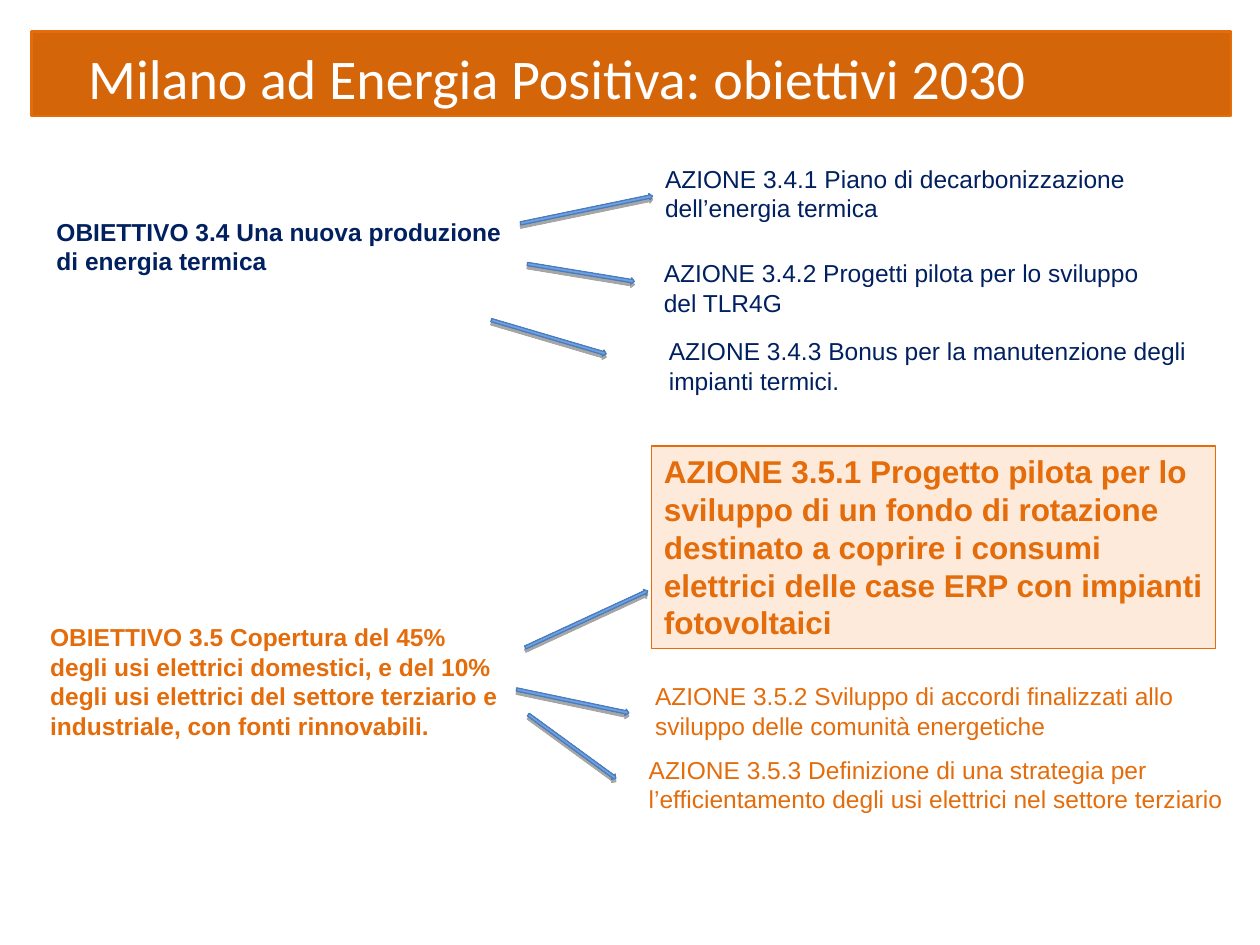
from lxml.etree import SubElement
from pptx import Presentation
from pptx.dml.color import RGBColor
from pptx.enum.shapes import MSO_SHAPE as SHAPE
from pptx.enum.text import MSO_ANCHOR as ANCHOR, PP_ALIGN as ALIGN
from pptx.oxml.ns import qn
from pptx.util import Inches, Pt

# Content
NAVY, ORANGE = "002060", "E46C0A"
TITLE = "Milano ad Energia Positiva: obiettivi 2030"
# (left, top, width, height), colour, bold, text
TEXTS = [
    ((0.35, 1.67, 3.83, 0.56), NAVY, True,
     "OBIETTIVO 3.4 Una nuova produzione di energia termica"),
    ((5.18, 1.25, 4.33, 0.57), NAVY, False,
     "AZIONE 3.4.1 Piano di decarbonizzazione dell’energia termica"),
    ((5.17, 2, 4.24, 0.57), NAVY, False,
     "AZIONE 3.4.2 Progetti pilota per lo sviluppo del TLR4G"),
    ((5.21, 2.62, 4.31, 0.57), NAVY, False,
     "AZIONE 3.4.3 Bonus per la manutenzione degli impianti termici."),
    ((0.3, 4.89, 3.83, 1.03), ORANGE, True,
     "OBIETTIVO 3.5 Copertura del 45% degli usi elettrici domestici, e del 10% "
     "degli usi elettrici del settore terziario e industriale, con fonti rinnovabili."),
    ((5.1, 5.36, 4.91, 0.56), ORANGE, False,
     "AZIONE 3.5.2 Sviluppo di accordi finalizzati allo sviluppo delle comunità energetiche"),
    ((5.05, 5.94, 4.91, 0.56), ORANGE, False,
     "AZIONE 3.5.3 Definizione di una strategia per l’efficientamento degli usi "
     "elettrici nel settore terziario"),
]
HIGHLIGHT = ("AZIONE 3.5.1 Progetto pilota per lo sviluppo di un fondo di rotazione "
             "destinato a coprire i consumi elettrici delle case ERP con impianti fotovoltaici")
# left, top, length, rotation
ARROWS = [
    (4.12, 1.64, 1.07, -11.7), (4.18, 2.14, 0.86, 9.3), (3.88, 2.65, 0.95, 16.4),
    (4.12, 4.89, 1.07, -24.8), (4.09, 5.54, 0.91, 11.8), (4.11, 5.9, 0.86, 36.1),
]
ARROW_HEIGHT = 0.05


def rgb(value):
    return RGBColor.from_string(value)


def box(*lengths):
    return [Inches(v) for v in lengths]


def write(sp, text, size, color, bold=False, font="Arial"):
    tf = sp.text_frame
    tf.word_wrap = True
    tf.vertical_anchor = ANCHOR.TOP
    p = tf.paragraphs[0]
    p.alignment = ALIGN.LEFT
    r = p.add_run()
    r.text = text
    r.font.size, r.font.bold, r.font.name = Pt(size), bold, font
    r.font.color.rgb = rgb(color)
    return p


def add_shape(s, kind, at, line, width, fill=None):
    sp = s.shapes.add_shape(kind, *box(*at))
    sp.shadow.inherit = False
    sp.line.color.rgb = rgb(line)
    sp.line.width = Pt(width)
    if fill:
        sp.fill.solid()
        sp.fill.fore_color.rgb = rgb(fill)
    return sp


def add_arrow(s, left, top, length, rotation):
    sp = add_shape(s, SHAPE.RIGHT_ARROW, (left, top, length, ARROW_HEIGHT), "4A7EBB", 0.75)
    sp.rotation = rotation
    sp.fill.gradient()
    sp.fill.gradient_angle = 90
    for stop, color in zip(sp.fill.gradient_stops, ("3E7FCC", "A4C1FF")):
        stop.color.rgb = rgb(color)
    # Soft drop shadow straight below
    effects = sp._element.spPr.find(qn("a:effectLst"))
    shadow = SubElement(effects, qn("a:outerShdw"), blurRad="0", dist=str(Pt(1.8)),
                        dir="5400000", rotWithShape="0")
    black = SubElement(shadow, qn("a:srgbClr"), val="000000")
    SubElement(black, qn("a:alpha"), val="35000")


prs = Presentation()
prs.slide_width, prs.slide_height = box(10, 7.5)
s = prs.slides.add_slide(prs.slide_layouts[5])

# Title over its bar
bar = add_shape(s, SHAPE.RECTANGLE, (0.25, 0.25, 9.52, 0.67), ORANGE, 1.5, "D56509")
s.shapes._spTree.insert(2, bar._element)
title = s.shapes.title
title.left, title.top, title.width, title.height = box(0.6, 0.33, 9.23, 0.61)
write(title, TITLE, 32, "FFFFFF", font="Calibri").line_spacing = Pt(36)

# Objectives and actions
for at, color, bold, text in TEXTS:
    write(s.shapes.add_textbox(*box(*at)), text, 14, color, bold)

# Highlighted action
panel = add_shape(s, SHAPE.RECTANGLE, (5.17, 3.54, 4.48, 1.61), ORANGE, 0.75, "FDEADA")
write(panel, HIGHLIGHT, 18, ORANGE, True)

# Arrows from objectives to actions
for arrow in ARROWS:
    add_arrow(s, *arrow)

prs.save("out.pptx")
